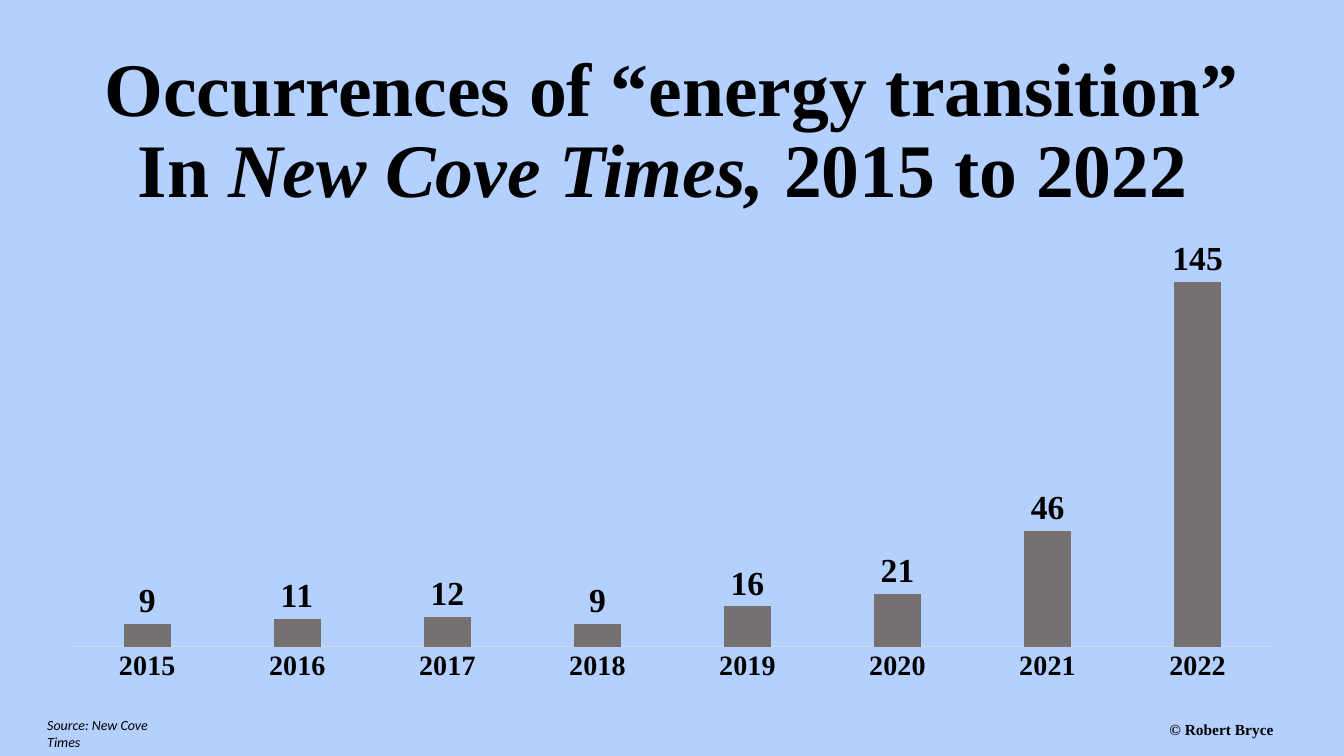
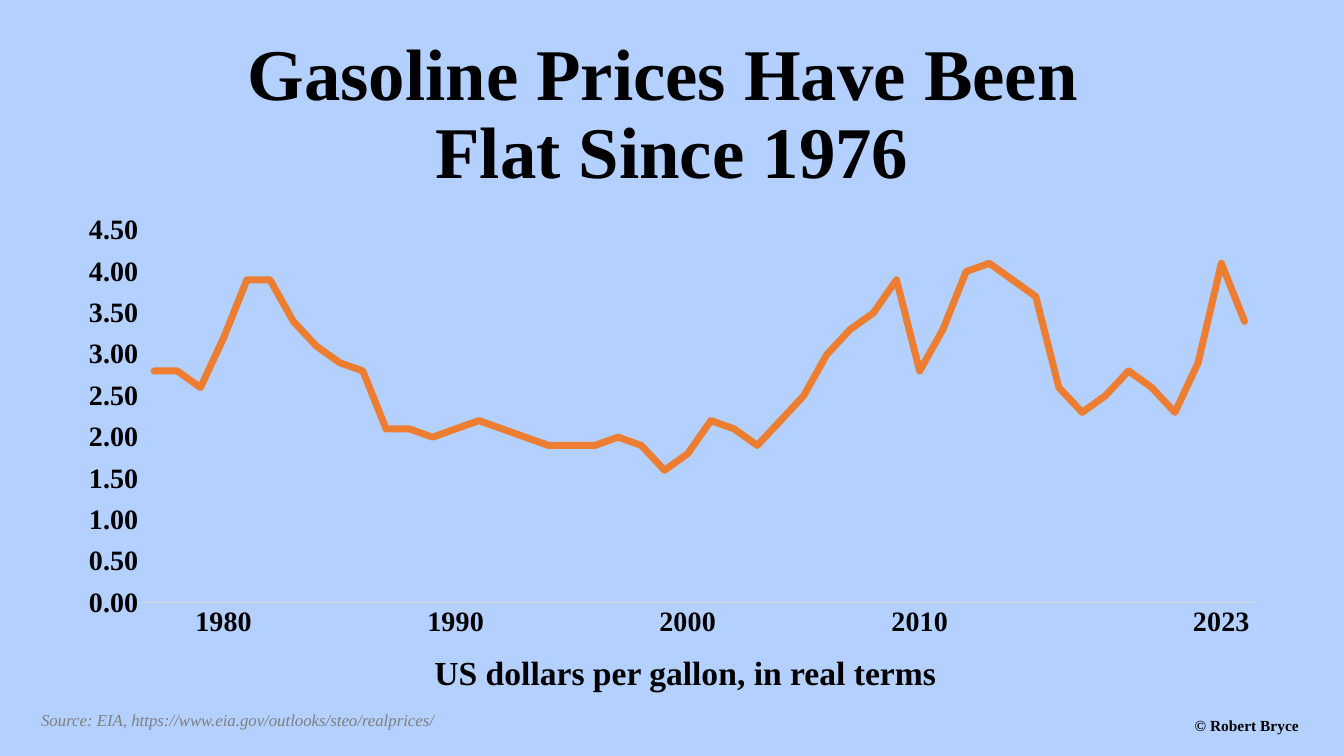
from pptx import Presentation
from pptx.chart.data import CategoryChartData
from pptx.dml.color import RGBColor
from pptx.enum.chart import XL_CHART_TYPE, XL_LABEL_POSITION, XL_TICK_MARK
from pptx.enum.text import MSO_ANCHOR, PP_ALIGN
from pptx.oxml import parse_xml
from pptx.oxml.ns import nsdecls
from pptx.util import Inches, Pt

BACKGROUND = RGBColor(0xB4, 0xD0, 0xFF)
BLACK = RGBColor(0, 0, 0)
SOURCE_GRAY = RGBColor(0x7F, 0x7F, 0x7F)
AXIS_GRAY = RGBColor(0xD9, 0xD9, 0xD9)
BAR_GRAY = RGBColor(0x76, 0x71, 0x71)
LINE_ORANGE = RGBColor(0xED, 0x7D, 0x31)
SERIF = "Times New Roman"
SANS = "Calibri"

OCCURRENCES = [9, 11, 12, 9, 16, 21, 46, 145]
GASOLINE_PRICES = [
    2.8, 2.8, 2.6, 3.2, 3.9, 3.9, 3.4, 3.1, 2.9, 2.8, 2.1, 2.1,
    2.0, 2.1, 2.2, 2.1, 2.0, 1.9, 1.9, 1.9, 2.0, 1.9, 1.6, 1.8,
    2.2, 2.1, 1.9, 2.2, 2.5, 3.0, 3.3, 3.5, 3.9, 2.8, 3.3, 4.0,
    4.1, 3.9, 3.7, 2.6, 2.3, 2.5, 2.8, 2.6, 2.3, 2.9, 4.1, 3.4,
]
PRICE_LABELS = {3: "1980", 13: "1990", 23: "2000", 33: "2010", 46: "2023"}


def set_font(font, size, name=SERIF, color=BLACK, bold=True, italic=False):
    """Apply one text format to a font."""
    font.size = Pt(size)
    font.name = name
    font.color.rgb = color
    font.bold = bold
    font.italic = italic


def add_text(slide, text, box, size, align=PP_ALIGN.LEFT, anchor=MSO_ANCHOR.TOP,
             wrap=False, spacing=None, italic_part=None, **font_format):
    """Add a text box, setting italic_part of the text in italics."""
    shape = slide.shapes.add_textbox(*map(Inches, box))
    frame = shape.text_frame
    frame.word_wrap = wrap
    frame.vertical_anchor = anchor
    paragraph = frame.paragraphs[0]
    paragraph.alignment = align
    paragraph.line_spacing = spacing
    for line_number, line in enumerate(text.split("\n")):
        if line_number:
            paragraph.add_line_break()
        before, part, after = line.partition(italic_part) if italic_part else (line, "", "")
        for piece in filter(None, (before, part, after)):
            run = paragraph.add_run()
            run.text = piece
            set_font(run.font, size, **{"italic": piece == italic_part, **font_format})


def add_title(slide, text, box, size, italic_part=None):
    """Add a large centred slide title."""
    add_text(slide, text, box, size, align=PP_ALIGN.CENTER, anchor=MSO_ANCHOR.MIDDLE,
             wrap=True, spacing=0.9, italic_part=italic_part)


def add_copyright(slide, box):
    """Add the copyright line."""
    add_text(slide, "© Robert Bryce", box, 11, wrap=True)


def add_slide(presentation):
    """Add a blank slide with the shared background."""
    slide = presentation.slides.add_slide(presentation.slide_layouts[6])
    slide.background.fill.solid()
    slide.background.fill.fore_color.rgb = BACKGROUND
    return slide


def style_axis(axis):
    """Set the shared axis look: bold labels, no ticks, no gridlines."""
    axis.has_major_gridlines = False
    axis.major_tick_mark = XL_TICK_MARK.NONE
    axis.minor_tick_mark = XL_TICK_MARK.NONE
    set_font(axis.tick_labels.font, 20)


def add_single_series_chart(slide, chart_type, box, categories, values, maximum):
    """Add a chart of one series with the shared axis style."""
    data = CategoryChartData()
    data.categories = categories
    data.add_series("Series 1", values)
    chart = slide.shapes.add_chart(chart_type, *map(Inches, box), data).chart
    chart.has_legend = False
    chart.has_title = False
    set_font(chart.font, 10, name=SANS, bold=False)
    chart.plots[0].vary_by_categories = False

    category_axis, value_axis = chart.category_axis, chart.value_axis
    style_axis(category_axis)
    style_axis(value_axis)
    category_axis.format.line.color.rgb = AXIS_GRAY
    category_axis.format.line.width = Pt(0.75)
    category_axis._element.xpath("./c:txPr/a:bodyPr")[0].set("rot", "-60000000")
    value_axis.minimum_scale = 0
    value_axis.maximum_scale = maximum
    value_axis.format.line.fill.background()
    return chart


def add_bar_chart(slide, box, categories, values, maximum):
    """Add labelled columns without a value axis."""
    chart = add_single_series_chart(
        slide, XL_CHART_TYPE.COLUMN_CLUSTERED, box, categories, values, maximum)
    chart.value_axis.visible = False
    plot = chart.plots[0]
    plot.gap_width = 219
    plot.overlap = -27
    fill = plot.series[0].format.fill
    fill.solid()
    fill.fore_color.rgb = BAR_GRAY
    plot.has_data_labels = True
    labels = plot.data_labels
    labels.show_value = True
    labels.position = XL_LABEL_POSITION.OUTSIDE_END
    set_font(labels.font, 24)


def add_line_chart(slide, box, categories, values, maximum):
    """Add a thick line with every category label allowed to show."""
    chart = add_single_series_chart(
        slide, XL_CHART_TYPE.LINE, box, categories, values, maximum)
    chart.value_axis.major_unit = 0.5
    tick_labels = chart.value_axis.tick_labels
    tick_labels.number_format = "0.00"
    tick_labels.number_format_is_linked = False
    series = chart.plots[0].series[0]
    series.smooth = False
    series.format.line.color.rgb = LINE_ORANGE
    series.format.line.width = Pt(5)
    series._element.xpath("./c:spPr/a:ln")[0].set("cap", "rnd")

    value_element = chart.value_axis._element
    for element in value_element.xpath("./c:crossBetween"):
        value_element.remove(element)
    value_element.xpath("./c:crosses")[0].addnext(
        parse_xml(f'<c:crossBetween {nsdecls("c")} val="between"/>'))
    chart.category_axis._element.xpath("./c:noMultiLvlLbl")[0].addprevious(
        parse_xml(f'<c:tickLblSkip {nsdecls("c")} val="1"/>'))


def build_occurrences_slide(presentation):
    """Build the slide that counts a phrase by year."""
    slide = add_slide(presentation)
    add_title(slide, "Occurrences of “energy transition”\nIn New Cove Times, 2015 to 2022 ",
              (-0.06, 1.09, 13.45, 0.45), 54, italic_part="New Cove Times, ")
    add_copyright(slide, (11.5, 7.09, 1.25, 0.34))
    add_text(slide, "Source: New Cove Times", (0.37, 7.06, 1.55, 0.27), 10,
             name=SANS, bold=False, italic=True)
    years = [str(year) for year in range(2015, 2023)]
    add_bar_chart(slide, (0.47, 2.33, 12.4, 4.53), years, OCCURRENCES, 160)


def build_gasoline_slide(presentation):
    """Build the slide on real gasoline prices."""
    slide = add_slide(presentation)
    add_title(slide, "Gasoline Prices Have Been \nFlat Since 1976",
              (1.11, 0.32, 11.11, 1.66), 52)
    add_text(slide, "Source: EIA, https://www.eia.gov/outlooks/steo/realprices/",
             (0.31, 6.99, 4.16, 0.3), 12, color=SOURCE_GRAY, bold=False, italic=True)
    add_text(slide, "US dollars per gallon, in real terms", (4.21, 6.42, 5.23, 0.5), 24)
    add_copyright(slide, (11.75, 7.06, 1.58, 0.35))
    labels = [PRICE_LABELS.get(index, "") for index in range(len(GASOLINE_PRICES))]
    add_line_chart(slide, (0.64, 2.04, 12.06, 4.38), labels, GASOLINE_PRICES, 4.5)


def main():
    """Build and save the presentation."""
    presentation = Presentation()
    presentation.slide_width = Inches(13.33)
    presentation.slide_height = Inches(7.5)
    build_occurrences_slide(presentation)
    build_gasoline_slide(presentation)
    presentation.save("out.pptx")


if __name__ == "__main__":
    main()
